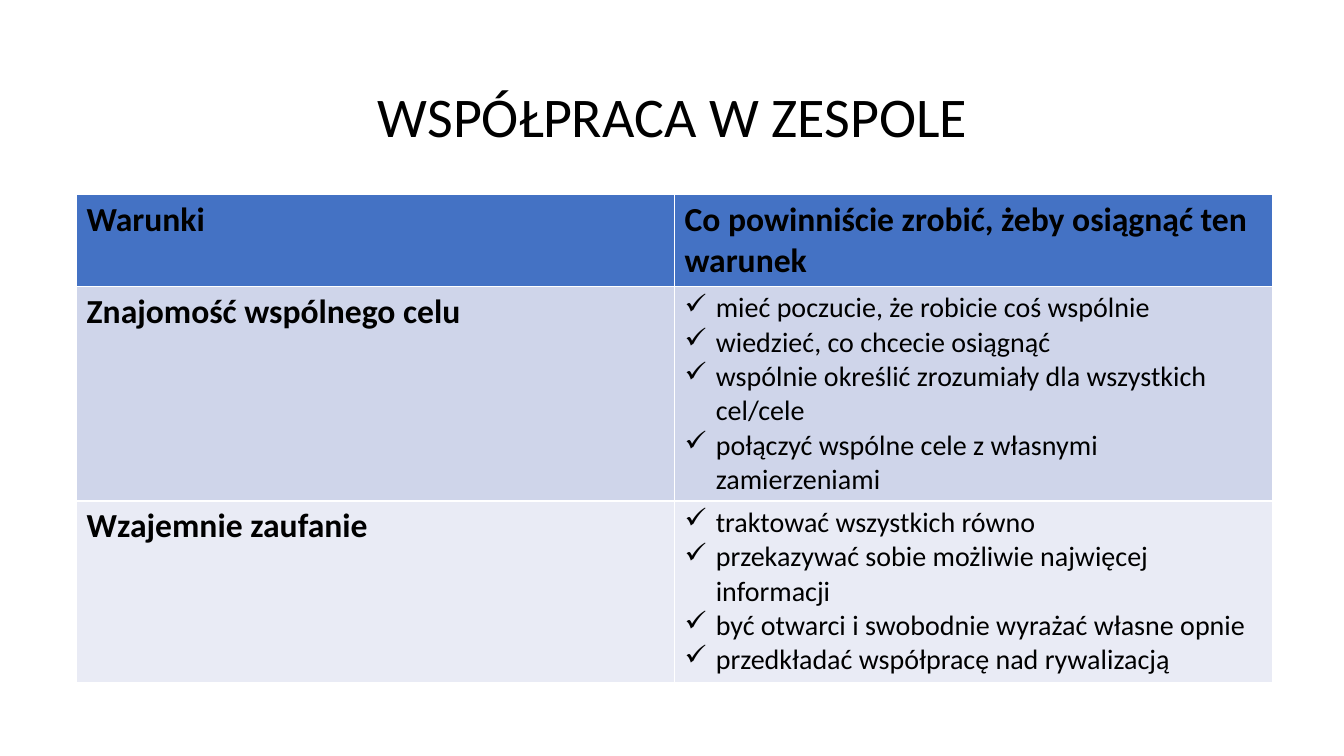
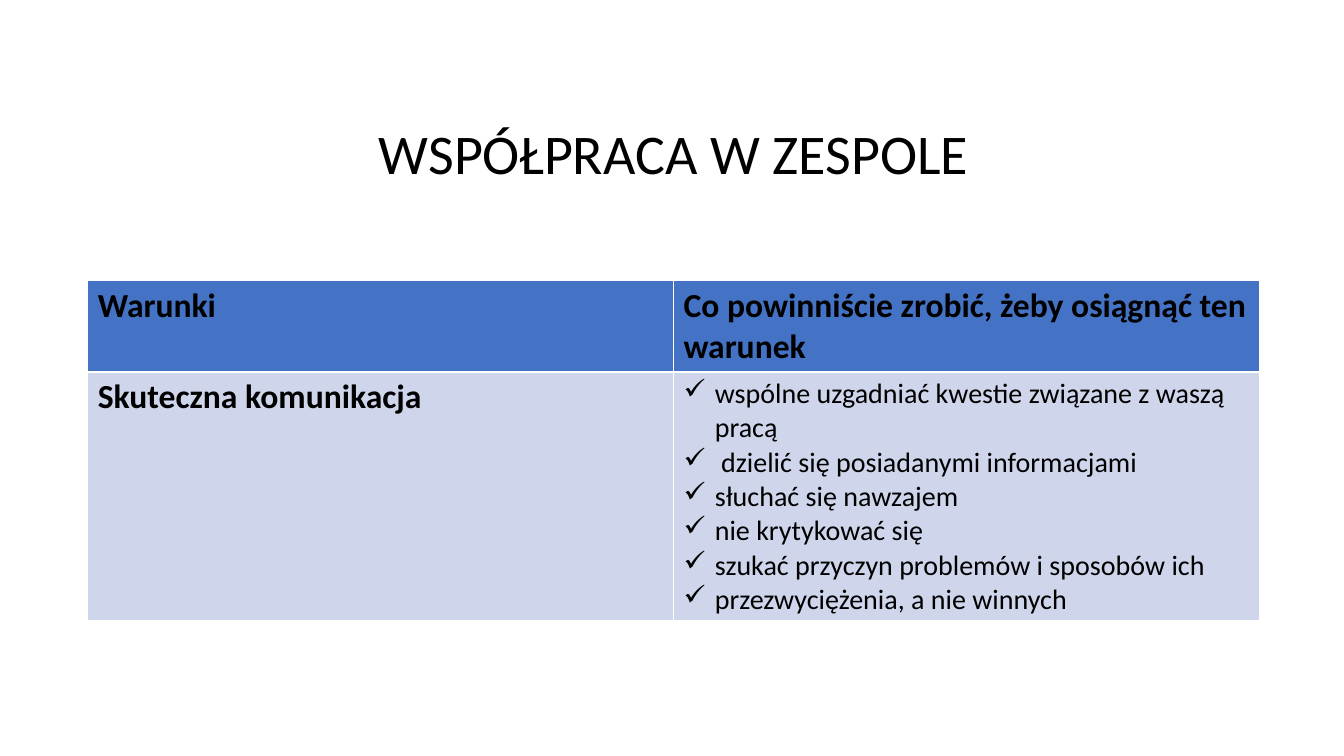
"""Builds two slides on the conditions of teamwork."""
from dataclasses import dataclass

from lxml import etree
from pptx import Presentation
from pptx.dml.color import RGBColor
from pptx.enum.text import MSO_ANCHOR, PP_ALIGN
from pptx.oxml.ns import qn
from pptx.util import Inches, Pt

CENTER = PP_ALIGN.CENTER
MIDDLE = MSO_ANCHOR.MIDDLE
BLANK_LAYOUT = 6

TITLE = "WSPÓŁPRACA W ZESPOLE"
HEADERS = ("Warunki", "Co powinniście zrobić, żeby osiągnąć ten warunek")


@dataclass(frozen=True)
class Theme:
    font: str = "Calibri"
    text: str = "000000"
    header_fill: str = "4472C4"
    band_fills: tuple = ("CFD5EA", "E9EBF5")
    title_size: int = 40
    heading_size: int = 24
    item_size: int = 20
    bullet: str = "✓"
    indent: float = 0.31


class Deck:
    def __init__(self, theme):
        self.theme = theme
        self.presentation = Presentation()
        self.presentation.slide_width = Inches(13.33)
        self.presentation.slide_height = Inches(7.5)
        self.slide = None

    def add_slide(self):
        layout = self.presentation.slide_layouts[BLANK_LAYOUT]
        self.slide = self.presentation.slides.add_slide(layout)

    def add_text(self, paragraph, text, size, bold=False):
        run = paragraph.add_run()
        run.text = text
        font_format = {"name": self.theme.font, "size": Pt(size), "bold": bold}
        for name, value in font_format.items():
            setattr(run.font, name, value)
        run.font.color.rgb = RGBColor.from_string(self.theme.text)

    def add_title(self, text, left, top):
        shape = self.slide.shapes.add_textbox(
            Inches(left), Inches(top), Inches(11), Inches(1.5))
        frame = shape.text_frame
        for name, value in {"word_wrap": True, "vertical_anchor": MIDDLE}.items():
            setattr(frame, name, value)
        paragraph = frame.paragraphs[0]
        for name, value in {"alignment": CENTER, "line_spacing": 0.9}.items():
            setattr(paragraph, name, value)
        self.add_text(paragraph, text, self.theme.title_size)

    def add_bullet(self, paragraph):
        properties = paragraph._p.get_or_add_pPr()
        indent = Inches(self.theme.indent)
        properties.set("marL", str(indent))
        properties.set("indent", str(-indent))
        etree.SubElement(properties, qn("a:buChar")).set("char", self.theme.bullet)

    def fill_cell(self, cell, color):
        cell.fill.solid()
        cell.fill.fore_color.rgb = RGBColor.from_string(color)

    def add_heading(self, cell, text):
        self.add_text(cell.text_frame.paragraphs[0], text,
                      self.theme.heading_size, bold=True)

    def add_items(self, cell, items):
        frame = cell.text_frame
        for index, item in enumerate(items):
            paragraph = frame.add_paragraph() if index else frame.paragraphs[0]
            self.add_bullet(paragraph)
            self.add_text(paragraph, item, self.theme.item_size)

    def add_conditions(self, left, top, width, heights, conditions):
        table = self.slide.shapes.add_table(
            len(heights), len(HEADERS), Inches(left), Inches(top),
            Inches(width), Inches(sum(heights))).table
        for row, height in zip(table.rows, heights):
            row.height = Inches(height)
        for column, header in enumerate(HEADERS):
            cell = table.cell(0, column)
            self.fill_cell(cell, self.theme.header_fill)
            self.add_heading(cell, header)
        bands = self.theme.band_fills
        for index, (condition, items) in enumerate(conditions):
            name_cell, items_cell = table.rows[index + 1].cells
            for cell in (name_cell, items_cell):
                self.fill_cell(cell, bands[index % len(bands)])
            self.add_heading(name_cell, condition)
            self.add_items(items_cell, items)


def main():
    deck = Deck(Theme())

    deck.add_slide()
    deck.add_title(TITLE, 1.17, 0.43)
    deck.add_conditions(0.76, 1.93, 11.86, (0.91, 2.13, 1.8), (
        ("Znajomość wspólnego celu", (
            "mieć poczucie, że robicie coś wspólnie",
            "wiedzieć, co chcecie osiągnąć",
            "wspólnie określić zrozumiały dla wszystkich cel/cele",
            "połączyć wspólne cele z własnymi zamierzeniami",
        )),
        ("Wzajemnie zaufanie", (
            "traktować wszystkich równo",
            "przekazywać sobie możliwie najwięcej informacji",
            "być otwarci i swobodnie wyrażać własne opnie",
            "przedkładać współpracę nad rywalizacją",
        )),
    ))

    deck.add_slide()
    deck.add_title(TITLE, 1.18, 0.8)
    deck.add_conditions(0.87, 2.78, 11.62, (0.91, 2.47), (
        ("Skuteczna komunikacja", (
            "wspólne uzgadniać kwestie związane z waszą pracą",
            " dzielić się posiadanymi informacjami",
            "słuchać się nawzajem",
            "nie krytykować się",
            "szukać przyczyn problemów i sposobów ich",
            "przezwyciężenia, a nie winnych",
        )),
    ))

    deck.presentation.save("out.pptx")


if __name__ == "__main__":
    main()
